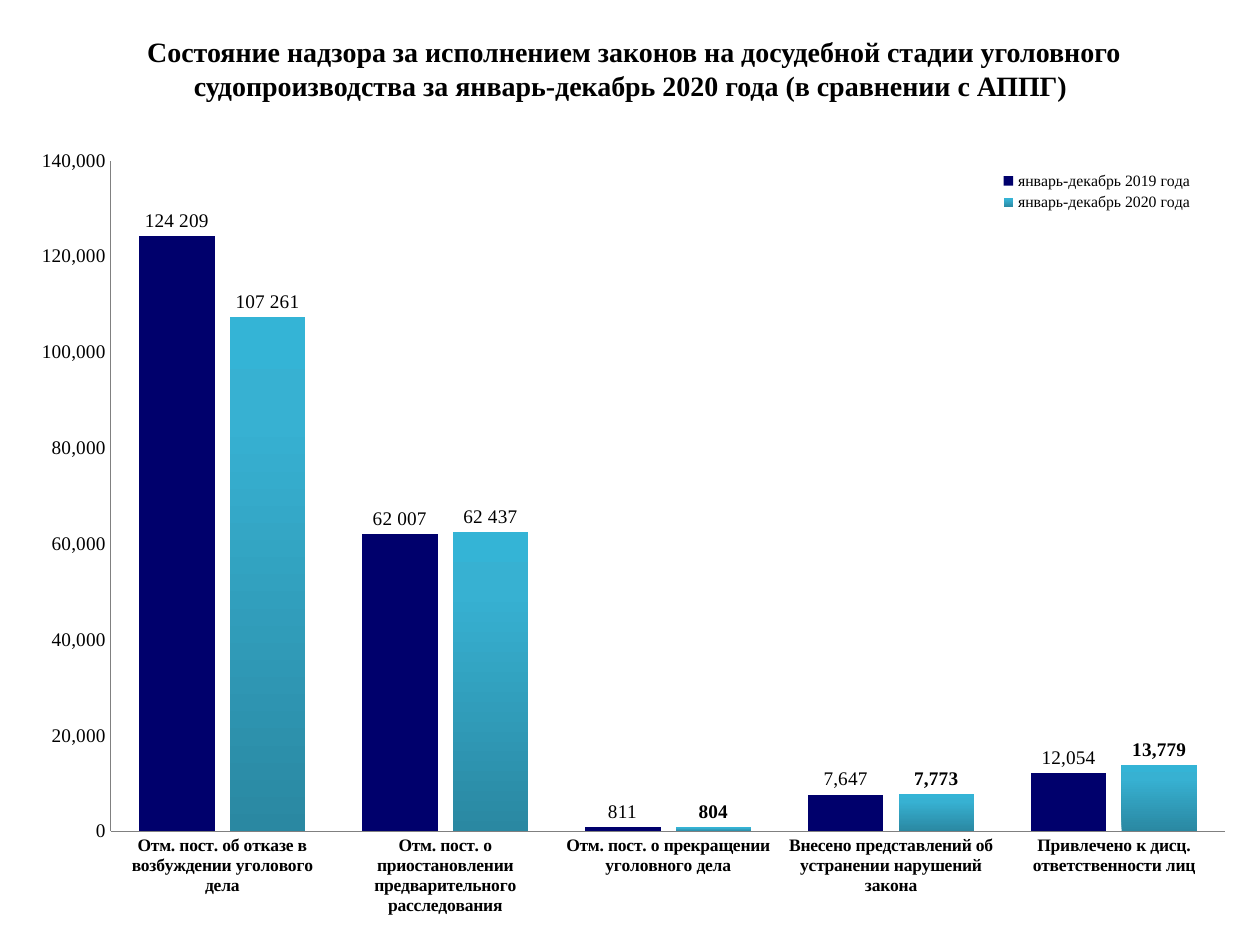
import copy

import pptx
import pptx.chart.data
import pptx.dml.color
import pptx.enum.chart
import pptx.enum.text
import pptx.util
from lxml import etree
from pptx.oxml.ns import qn

EMU_PER_PX = 914400 // 126
FONT = "Times New Roman"
BLACK = "000000"
AXIS_GRAY = "808080"

TITLE = ("Состояние надзора за исполнением законов на досудебной стадии уголовного "
         "судопроизводства за январь-декабрь 2020 года (в сравнении с АППГ) ")
CATEGORIES = [
    "Отм. пост. об отказе в возбуждении уголового дела",
    "Отм. пост. о приостановлении предварительного расследования",
    "Отм. пост. о прекращении уголовного дела",
    "Внесено представлений об устранении нарушений закона",
    "Привлечено к дисц. ответственности лиц",
]
SERIES = {
    "январь-декабрь 2019 года": [124209, 62007, 811, 7647, 12054],
    "январь-декабрь 2020 года": [107261, 62437, 804, 7773, 13779],
}
GRADIENT = [(0, "2A88A2"), (0.8, "37B1D2"), (1, "34B4D6")]


def color(value):
    return pptx.dml.color.RGBColor.from_string(value)


def px(value):
    return pptx.util.Emu(value * EMU_PER_PX)


class SlideBuilder:
    def __init__(self, deck):
        self.slide = deck.slides.add_slide(deck.slide_layouts[5])

    def style(self, font, size, bold=False):
        font.name = FONT
        font.size = pptx.util.Pt(size)
        font.bold = bold
        font.color.rgb = color(BLACK)

    def title(self, text, left, top, width, height):
        box = self.slide.shapes.title
        box.left, box.top, box.width, box.height = map(px, (left, top, width, height))
        frame = box.text_frame
        frame.word_wrap = True
        frame.auto_size = pptx.enum.text.MSO_AUTO_SIZE.NONE
        frame.vertical_anchor = pptx.enum.text.MSO_ANCHOR.MIDDLE
        frame.text = text
        para = frame.paragraphs[0]
        para.alignment = pptx.enum.text.PP_ALIGN.CENTER
        self.style(para.font, 16, True)

    def column_chart(self, categories, series, left, top, width, height):
        data = pptx.chart.data.CategoryChartData(number_format="#,##0")
        data.categories = categories
        for name, values in series.items():
            data.add_series(name, values)
        kind = pptx.enum.chart.XL_CHART_TYPE.COLUMN_CLUSTERED
        area = map(px, (left, top, width, height))
        chart = self.slide.shapes.add_chart(kind, *area, data).chart
        chart.has_title = False
        self.style(chart.font, 11)
        plot = chart.plots[0]
        plot.gap_width, plot.overlap = 75, -20
        plot.vary_by_categories = False
        return chart

    def axis(self, axis, size, bold=False):
        axis.has_major_gridlines = False
        axis.major_tick_mark = pptx.enum.chart.XL_TICK_MARK.NONE
        axis.minor_tick_mark = pptx.enum.chart.XL_TICK_MARK.NONE
        axis.format.line.color.rgb = color(AXIS_GRAY)
        axis.format.line.width = pptx.util.Pt(0.75)
        self.style(axis.tick_labels.font, size, bold)

    def legend(self, chart, size):
        chart.has_legend = True
        chart.legend.position = pptx.enum.chart.XL_LEGEND_POSITION.BOTTOM
        chart.legend.include_in_layout = False
        self.style(chart.legend.font, size)
        return chart.legend

    def labels(self, series, bold, spaced_points):
        outside = pptx.enum.chart.XL_LABEL_POSITION.OUTSIDE_END
        labels = series.data_labels
        labels.show_value = True
        labels.number_format = "#,##0"
        labels.number_format_is_linked = False
        labels.position = outside
        self.style(labels.font, 11, bold)
        # The large values are written with a space between thousands
        for index in range(spaced_points):
            label = series.points[index].data_label
            para = label.text_frame.paragraphs[0]
            span = para.add_run()
            span.text = f"{series.values[index]:,.0f}".replace(",", " ")
            self.style(span.font, 11)
            label.position = outside

    def gradient(self, series, stops, angle):
        fill = series.format.fill
        fill.gradient()
        fill.gradient_angle = angle
        stop_list = next(series._element.iter(qn("a:gsLst")))
        while len(stop_list) < len(stops):
            stop_list.append(copy.deepcopy(stop_list[-1]))
        for stop, (position, value) in zip(fill.gradient_stops, stops):
            stop.position = position
            stop.color.rgb = color(value)

    def layout(self, part, x, y, w, h, inner=False):
        """Place a chart part by fractions of the chart area."""
        element = part._element
        for old in element.findall(qn("c:layout")):
            element.remove(old)
        layout = etree.Element(qn("c:layout"))
        manual = etree.SubElement(layout, qn("c:manualLayout"))
        settings = [("layoutTarget", "inner")] if inner else []
        settings += [("xMode", "edge"), ("yMode", "edge"),
                     ("x", x), ("y", y), ("w", w), ("h", h)]
        for tag, value in settings:
            etree.SubElement(manual, qn(f"c:{tag}")).set("val", str(value))
        position = element.find(qn("c:legendPos"))
        if position is None:
            element.insert(0, layout)
        else:
            position.addnext(layout)


def main():
    deck = pptx.Presentation()
    deck.slide_width = pptx.util.Inches(10)
    deck.slide_height = pptx.util.Inches(7.5)
    builder = SlideBuilder(deck)

    # Heading
    builder.title(TITLE, 67, 30, 1134, 77)

    # Chart with its axes
    chart = builder.column_chart(CATEGORIES, SERIES, 25, 145, 1225, 780)
    builder.axis(chart.category_axis, 10, True)
    builder.axis(chart.value_axis, 11)
    chart.value_axis.minimum_scale = 0
    chart.value_axis.maximum_scale = 140000
    chart.value_axis.major_unit = 20000
    chart.value_axis.tick_labels.number_format = "#,##0"
    chart.value_axis.tick_labels.number_format_is_linked = False

    # Columns and their values
    previous, current = chart.plots[0].series
    previous.format.fill.solid()
    previous.format.fill.fore_color.rgb = color("00006C")
    builder.gradient(current, GRADIENT, 90)
    builder.labels(previous, False, 2)
    builder.labels(current, True, 2)

    # Plot area and legend positions
    plot_area = chart.plots[0]._element.getparent()
    legend = builder.legend(chart, 9)
    builder.layout(legend, 0.79, 0.03, 0.17, 0.06)
    PlotArea = type("PlotArea", (), {"_element": plot_area})
    builder.layout(PlotArea, 0.07, 0.02, 0.91, 0.86, inner=True)

    deck.save("out.pptx")


if __name__ == "__main__":
    main()
